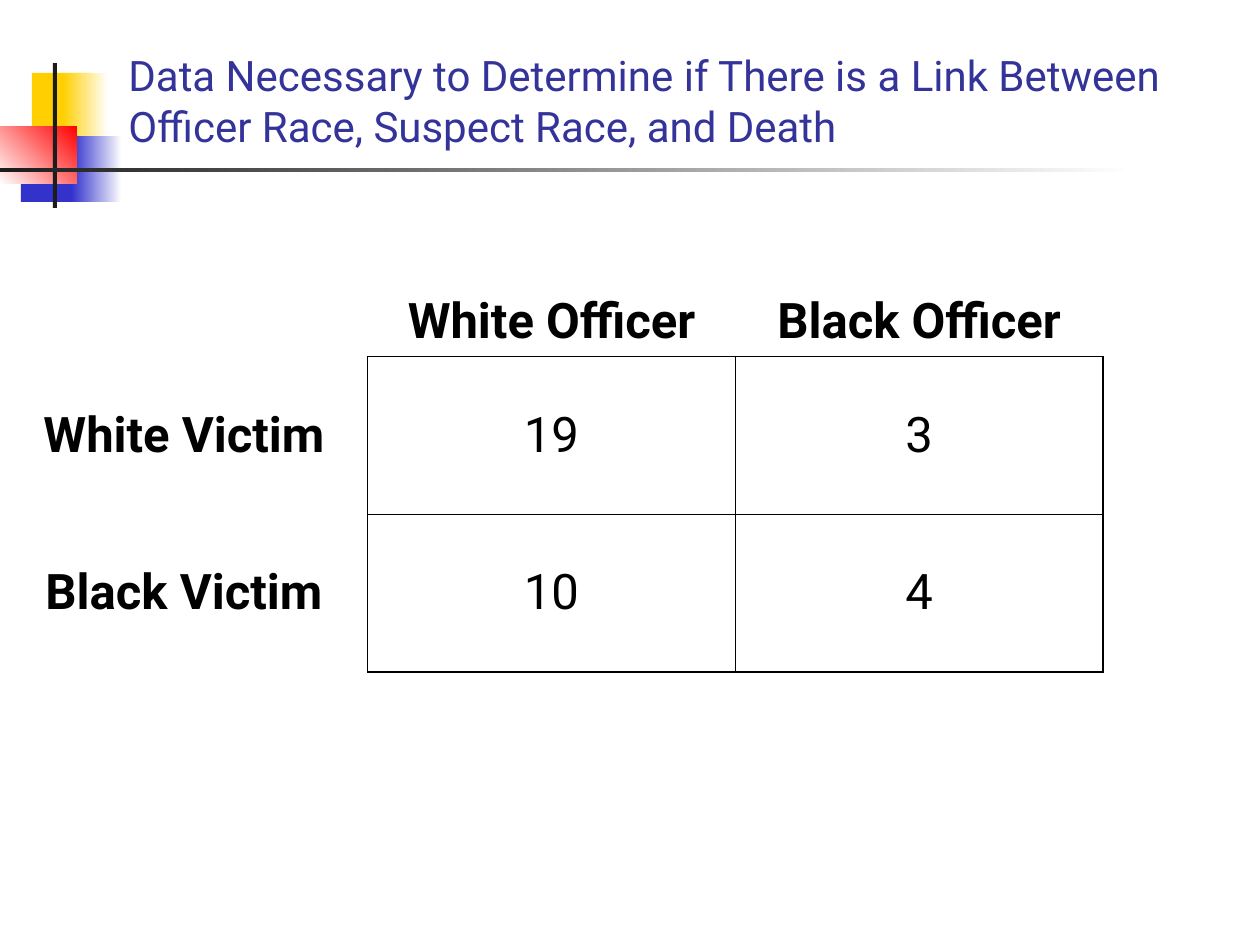
import dataclasses
import typing

import lxml.etree
import pptx
import pptx.dml.color
import pptx.enum.shapes
import pptx.enum.text
import pptx.oxml.ns
import pptx.util

EMU_PER_PX = 914400 / 126
FONT = "Roboto"
BLACK, WHITE, DARK = "000000", "FFFFFF", "1C1C1C"
YELLOW, BLUE, RED = "FFCF01", "3333CC", "FF0000"
TITLE_COLOR = "333399"
MIDDLE = pptx.enum.text.MSO_ANCHOR.MIDDLE
BOTTOM = pptx.enum.text.MSO_ANCHOR.BOTTOM


@dataclasses.dataclass
class Block:
    left: int
    top: int
    width: int
    height: int
    color: str
    end_color: str = ""
    angle: int = 0  # counter-clockwise degrees


BLOCKS = [
    Block(32, 73, 60, 66, YELLOW),
    Block(63, 73, 45, 66, YELLOW, WHITE),
    Block(21, 136, 58, 66, BLUE),
    Block(72, 136, 50, 66, BLUE, WHITE),
    Block(0, 126, 77, 58, WHITE, RED, 45),
    Block(53, 63, 4, 145, DARK),
    Block(0, 168, 1134, 4, DARK, WHITE),
]

TITLE = ("Data Necessary to Determine if There is a Link Between "
         "Officer Race, Suspect Race, and Death")
ROWS = [
    ["", "White Officer", "Black Officer"],
    ["White Victim", "19", "3"],
    ["Black Victim", "10", "4"],
]


def px(length: int) -> pptx.util.Emu:
    return pptx.util.Emu(round(length * EMU_PER_PX))


def rgb(color: str) -> pptx.dml.color.RGBColor:
    return pptx.dml.color.RGBColor.from_string(color)


def add_span(para: typing.Any, text: str, size: int, color: str, bold: bool = False) -> None:
    span = para.add_run()
    span.text = text
    span.font.name = FONT
    span.font.size = pptx.util.Pt(size)
    span.font.bold = bold
    span.font.color.rgb = rgb(color)


def draw_block(page: typing.Any, block: Block) -> None:
    shape = page.shapes.add_shape(
        pptx.enum.shapes.MSO_SHAPE.RECTANGLE,
        px(block.left), px(block.top), px(block.width), px(block.height))
    shape.shadow.inherit = False
    shape.line.fill.background()
    if block.end_color:
        shape.fill.gradient()
        shape.fill.gradient_angle = block.angle
        for stop, color in zip(shape.fill.gradient_stops, (block.color, block.end_color)):
            stop.color.rgb = rgb(color)
    else:
        shape.fill.solid()
        shape.fill.fore_color.rgb = rgb(block.color)


def set_borders(cell: typing.Any, shown: str) -> None:
    """Draw the sides named in shown (from L, R, T, B) and hide the others."""
    properties = cell._tc.get_or_add_tcPr()
    qn = pptx.oxml.ns.qn
    for side in "LRTB":
        line = lxml.etree.SubElement(properties, qn(f"a:ln{side}"), w=str(pptx.util.Pt(1)))
        if side in shown:
            fill = lxml.etree.SubElement(line, qn("a:solidFill"))
            lxml.etree.SubElement(fill, qn("a:srgbClr"), val=BLACK)
        else:
            lxml.etree.SubElement(line, qn("a:noFill"))


def draw_title(page: typing.Any) -> None:
    box = page.shapes.add_textbox(px(116), px(21), px(1116), px(136))
    box.text_frame.word_wrap = True
    box.text_frame.vertical_anchor = BOTTOM
    add_span(box.text_frame.paragraphs[0], TITLE, 24, TITLE_COLOR)


def draw_table(page: typing.Any) -> None:
    frame = page.shapes.add_table(3, 3, px(0), px(199), px(1103), px(473))
    table = frame.table
    table.first_row = table.horz_banding = False
    for row_index, texts in enumerate(ROWS):
        for column_index, text in enumerate(texts):
            cell = table.cell(row_index, column_index)
            is_heading = row_index == 0 or column_index == 0
            if not text:
                shown = ""
            elif row_index == 0:
                shown = "B"
            elif column_index == 0:
                shown = "R"
            else:
                shown = "LRTB"
            set_borders(cell, shown)
            cell.fill.background()
            if text:
                cell.vertical_anchor = BOTTOM if row_index == 0 else MIDDLE
                para = cell.text_frame.paragraphs[0]
                para.alignment = pptx.enum.text.PP_ALIGN.CENTER
                para.space_before = pptx.util.Pt(5.6)
                add_span(para, text, 28, BLACK, is_heading)


def main() -> None:
    deck = pptx.Presentation()
    deck.slide_width, deck.slide_height = px(1260), px(945)
    page = deck.slides.add_slide(deck.slide_layouts[6])

    # Corner ornament and rule
    for block in BLOCKS:
        draw_block(page, block)

    # Title and counts
    draw_title(page)
    draw_table(page)
    deck.save("out.pptx")


if __name__ == "__main__":
    main()
